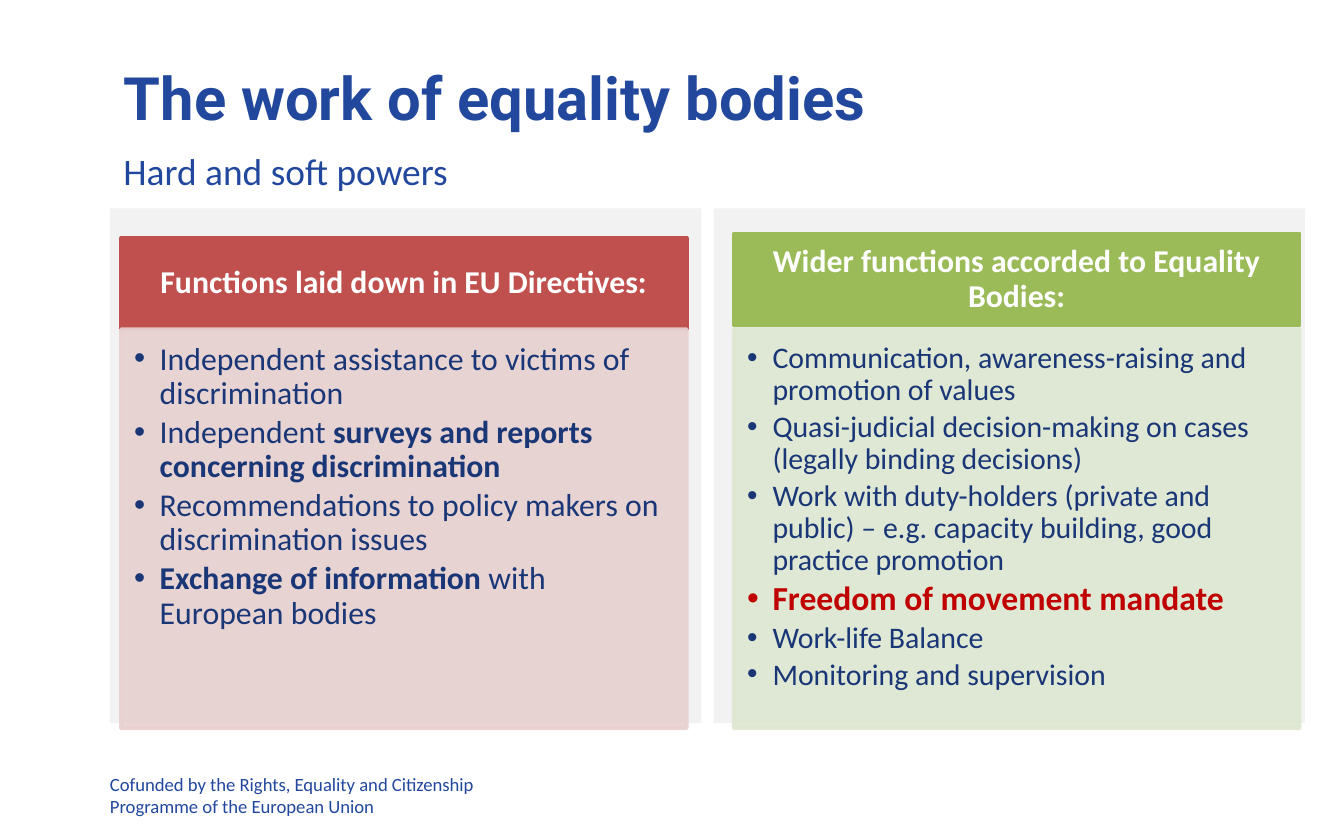
from lxml.etree import SubElement
from pptx import Presentation
from pptx.dml.color import RGBColor
from pptx.enum.shapes import MSO_SHAPE
from pptx.enum.text import MSO_ANCHOR, MSO_AUTO_SIZE, PP_ALIGN
from pptx.oxml.ns import qn
from pptx.util import Inches, Pt

COLORS = {
    "blue": "22489E",
    "navy": "193676",
    "highlight": "C00000",
    "white": "FFFFFF",
    "backdrop": "F2F2F2",
    "red": "C0504D",
    "pale_red": "E8D0D0",
    "green": "9BBB59",
    "pale_green": "DEE7D1",
}

DIRECTIVE_FUNCTIONS = [
    [("Independent assistance to victims of discrimination", False)],
    [("Independent ", False), ("surveys and reports concerning discrimination", True)],
    [("Recommendations to policy makers on discrimination issues", False)],
    [("Exchange of information", True), (" with European bodies", False)],
]
HIGHLIGHTED = "Freedom of movement mandate"
WIDER_FUNCTIONS = [
    [("Communication, awareness-raising and promotion of values", False)],
    [("Quasi-judicial decision-making on cases (legally binding decisions)", False)],
    [("Work with duty-holders (private and public) – e.g. capacity building, "
      "good practice promotion", False)],
    [(HIGHLIGHTED, True)],
    [("Work-life Balance", False)],
    [("Monitoring and supervision", False)],
]


def color(name):
    return RGBColor.from_string(COLORS[name])


def set_font(font, size, color_name, bold=None, name="Calibri"):
    font.name = name
    font.size = Pt(size)
    font.bold = bold
    font.color.rgb = color(color_name)


def set_margins(frame, left, top, right, bottom):
    frame.margin_left, frame.margin_top = Inches(left), Inches(top)
    frame.margin_right, frame.margin_bottom = Inches(right), Inches(bottom)


def set_opacity(fill_parent, percent):
    for rgb in fill_parent.findall(qn("a:solidFill") + "/" + qn("a:srgbClr")):
        SubElement(rgb, qn("a:alpha"), val=str(percent * 1000))


def add_panel(slide, left, top, width, height, fill, outlined=True, opacity=100):
    panel = slide.shapes.add_shape(
        MSO_SHAPE.RECTANGLE, Inches(left), Inches(top), Inches(width), Inches(height))
    panel.shadow.inherit = False
    panel.fill.solid()
    panel.fill.fore_color.rgb = color(fill)
    if outlined:
        panel.line.color.rgb = color(fill)
        panel.line.width = Pt(2)
    else:
        panel.line.fill.background()
    if opacity < 100:
        properties = panel.fill._xPr
        set_opacity(properties, opacity)
        set_opacity(properties.find(qn("a:ln")), opacity)
    panel.text_frame.word_wrap = True
    return panel


def add_bullet(para):
    properties = para._p.get_or_add_pPr()
    properties.set("marL", str(Inches(0.19)))
    properties.set("indent", str(-Inches(0.19)))
    SubElement(properties, qn("a:buFont"), typeface="Arial")
    SubElement(properties, qn("a:buChar"), char="•")


def add_header(slide, left, top, fill, text):
    frame = add_panel(slide, left, top, 4.21, 0.68, fill).text_frame
    frame.vertical_anchor = MSO_ANCHOR.MIDDLE
    set_margins(frame, 0.13, 0.08, 0.13, 0.08)
    para = frame.paragraphs[0]
    para.text = text
    para.alignment = PP_ALIGN.CENTER
    para.line_spacing = 0.9
    set_font(para.font, 17, "white", True)


def add_bullet_list(slide, left, fill, items, size):
    frame = add_panel(slide, left, 2.45, 4.21, 2.97, fill, opacity=90).text_frame
    frame.vertical_anchor = MSO_ANCHOR.TOP
    set_margins(frame, 0.1, 0.1, 0.13, 0.15)
    for index, item in enumerate(items):
        para = frame.paragraphs[0] if index == 0 else frame.add_paragraph()
        para.alignment = PP_ALIGN.LEFT
        para.line_spacing = 0.9
        para.space_after = Pt(round(size * 0.15, 1))
        add_bullet(para)
        highlighted = item[0][0] == HIGHLIGHTED
        for text, bold in item:
            span = para.add_run()
            span.text = text
            set_font(span.font, 18 if highlighted else size,
                     "highlight" if highlighted else "navy", bold)


def add_label(slide, left, top, width, height, text, size):
    box = slide.shapes.add_textbox(
        Inches(left), Inches(top), Inches(width), Inches(height))
    box.text_frame.word_wrap = True
    para = box.text_frame.paragraphs[0]
    para.text = text
    set_font(para.font, size, "blue")


def set_title(slide, text):
    title = slide.shapes.title
    title.left, title.top = Inches(0.82), Inches(0.4)
    title.width, title.height = Inches(6.64), Inches(0.72)
    frame = title.text_frame
    frame.auto_size = MSO_AUTO_SIZE.NONE
    frame.vertical_anchor = MSO_ANCHOR.TOP
    para = frame.paragraphs[0]
    para.text = text
    para.alignment = PP_ALIGN.LEFT
    set_font(para.font, 32, "blue", True, "Roboto")


def main():
    deck = Presentation()
    deck.slide_width, deck.slide_height = Inches(10), Inches(6.25)
    slide = deck.slides.add_slide(deck.slide_layouts[5])

    for left in (0.82, 5.31):
        add_panel(slide, left, 1.55, 4.4, 3.83, "backdrop", outlined=False)
    add_label(slide, 0.72, 5.7, 2.94, 0.44,
              "Cofunded by the Rights, Equality and Citizenship "
              "Programme of the European Union", 10)
    add_label(slide, 0.82, 1.05, 4.72, 0.58, "Hard and soft powers", 20)
    set_title(slide, "The work of equality bodies")

    add_header(slide, 0.9, 1.77, "red", "Functions laid down in EU Directives:")
    add_bullet_list(slide, 0.9, "pale_red", DIRECTIVE_FUNCTIONS, 17)
    add_header(slide, 5.46, 1.74, "green", "Wider functions accorded to Equality Bodies:")
    add_bullet_list(slide, 5.46, "pale_green", WIDER_FUNCTIONS, 16)

    deck.save("out.pptx")


if __name__ == "__main__":
    main()
